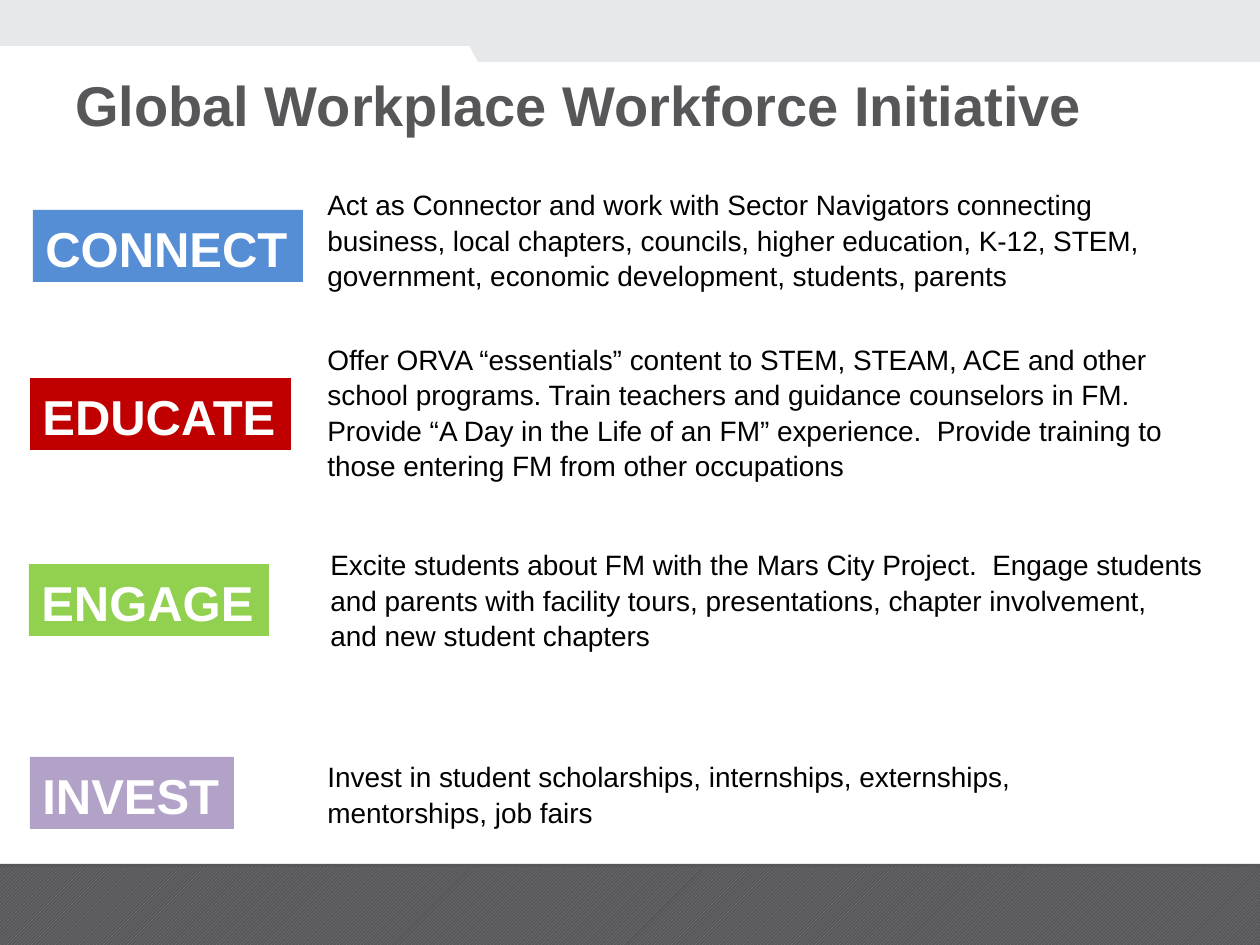
"""Build the Global Workplace Workforce Initiative slide."""
import pptx
import pptx.dml.color
import pptx.enum.dml
import pptx.enum.shapes
import pptx.enum.text
import pptx.util

PX = pptx.util.Inches(1) / 126
GREY, PALE, WHITE, BLACK = "575659", "E7E8E9", "FFFFFF", "000000"


def color(value):
    return pptx.dml.color.RGBColor.from_string(value)


def add_box(page, left, top, width, height, fill=None, text="", size=16,
            ink=BLACK, bold=False, wrap=True, spacing=1.05):
    area = [round(n * PX) for n in (left, top, width, height)]
    if fill:
        box = page.shapes.add_shape(pptx.enum.shapes.MSO_SHAPE.RECTANGLE, *area)
        box.shadow.inherit = False
        box.fill.solid()
        box.fill.fore_color.rgb = color(fill)
        box.line.fill.background()
    else:
        box = page.shapes.add_textbox(*area)
    if text:
        frame = box.text_frame
        frame.text = text
        frame.word_wrap = wrap
        para = frame.paragraphs[0]
        para.alignment = pptx.enum.text.PP_ALIGN.LEFT
        para.line_spacing = spacing
        for span in para.runs:
            span.font.name = "Arial"
            span.font.size = pptx.util.Pt(size)
            span.font.bold = bold
            span.font.color.rgb = color(ink)
    return box


deck = pptx.Presentation()
deck.slide_width = round(1260 * PX)
deck.slide_height = round(945 * PX)
page = deck.slides.add_slide(deck.slide_layouts[6])

add_box(page, 0, 864, 1260, 81, GREY)
builder = page.shapes.build_freeform(469, 45, scale=PX)
builder.add_line_segments([(1260, 44), (1260, 62), (478, 62)], close=True)
tab = builder.convert_to_shape()
tab.shadow.inherit = False
tab.fill.solid()
tab.fill.fore_color.rgb = color(PALE)
tab.line.fill.background()
add_box(page, 0, 0, 1260, 46, PALE)

footer = add_box(page, 0, 867, 1260, 78, GREY)
footer.fill.patterned()
footer.fill.pattern = pptx.enum.dml.MSO_PATTERN.LIGHT_UPWARD_DIAGONAL
footer.fill.fore_color.rgb = color("808080")
footer.fill.back_color.rgb = color(GREY)

title = add_box(page, 63, 62, 1134, 93, text="Global Workplace Workforce Initiative",
                size=32, ink=GREY, bold=True, spacing=0.9)
title.text_frame.vertical_anchor = pptx.enum.text.MSO_ANCHOR.MIDDLE

goals = [
    ("CONNECT", "558ED5", (33, 210, 270), (315, 180, 945, 115),
     "Act as Connector and work with Sector Navigators connecting\v"
     "business, local chapters, councils, higher education, K-12, STEM, "
     "government, economic development, students, parents"),
    ("EDUCATE", "C00000", (30, 378, 261), (315, 335, 914, 149),
     "Offer ORVA “essentials” content to STEM, STEAM, ACE and other school "
     "programs. Train teachers and guidance counselors in FM.  Provide “A Day "
     "in the Life of an FM” experience.  Provide training to those entering FM "
     "from other occupations"),
    ("ENGAGE", "92D050", (29, 564, 240), (318, 540, 942, 115),
     "Excite students about FM with the Mars City Project.  Engage students "
     "and parents with facility tours, presentations, chapter involvement,\v"
     "and new student chapters"),
    ("INVEST", "B3A2C7", (30, 757, 204), (315, 752, 914, 81),
     "Invest in student scholarships, internships, externships,\v"
     "mentorships, job fairs"),
]
for name, fill, label_area, text_area, description in goals:
    add_box(page, *text_area, text=description)
    add_box(page, *label_area, 72, fill, name, 28, WHITE, True, wrap=False)

deck.save("out.pptx")
